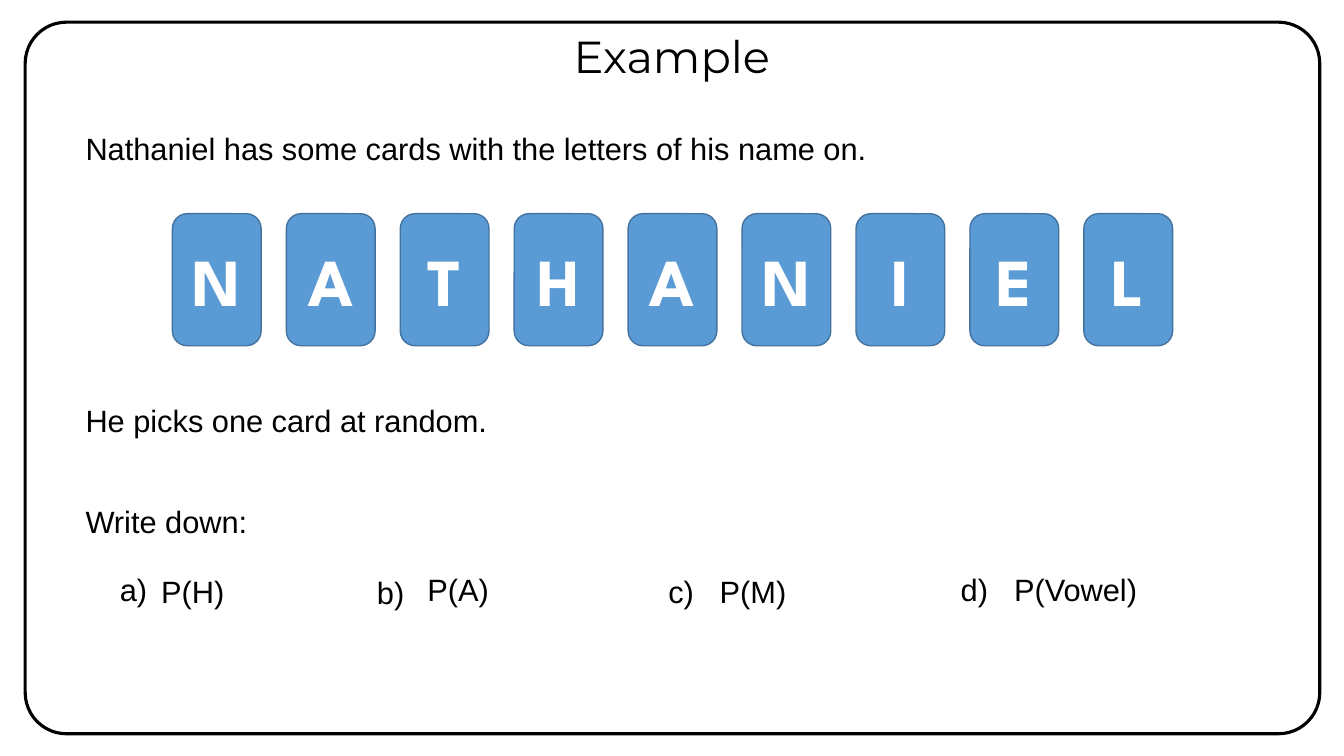
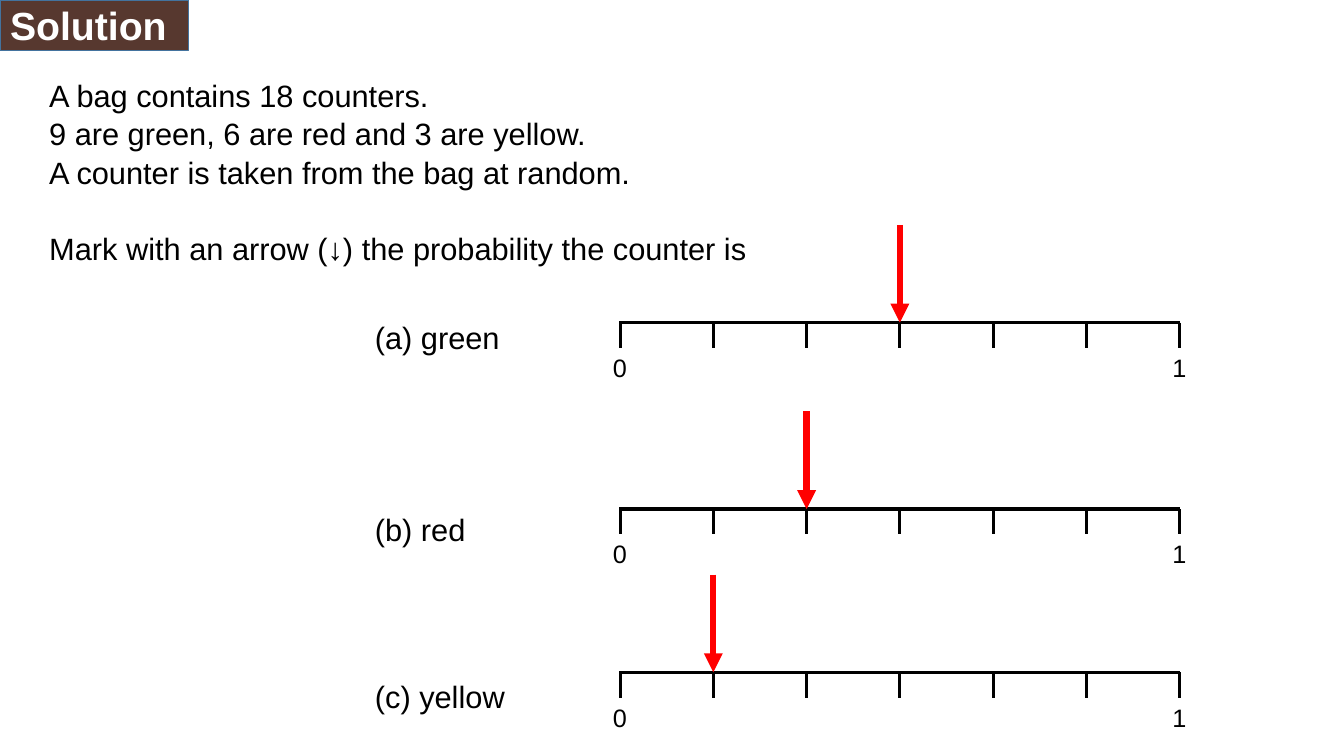
from lxml import etree
from pptx import Presentation
from pptx.dml.color import RGBColor
from pptx.enum import shapes, text
from pptx.oxml import ns
from pptx.util import Inches, Pt

BLACK = RGBColor(0x00, 0x00, 0x00)
WHITE = RGBColor(0xFF, 0xFF, 0xFF)
BLUE = RGBColor(0x5B, 0x9B, 0xD5)
DARK_BLUE = RGBColor(0x43, 0x73, 0x9E)
BROWN = RGBColor(0x57, 0x38, 0x2F)
RED = RGBColor(0xFF, 0x00, 0x00)
BODY_FONT, TITLE_FONT, CARD_FONT = "Arial", "Montserrat", "League Spartan"
LEFT, CENTER = text.PP_ALIGN.LEFT, text.PP_ALIGN.CENTER
TOP, MIDDLE = text.MSO_ANCHOR.TOP, text.MSO_ANCHOR.MIDDLE
BODY_SIZE, LINE_SPACING = 22, 1.05
LINE_HEIGHT = 0.47

NAME = "NATHANIEL"
CARD_LEFT, CARD_TOP, CARD_WIDTH, CARD_HEIGHT, CARD_PITCH = 1.71, 2.12, 0.88, 1.31, 1.13
STATEMENTS = [
    ("Nathaniel has some cards with the letters of his name on.", 1.22),
    ("He picks one card at random.", 3.92),
    ("Write down:", 4.92),
]
# label, its left and top, event, its left and top
QUESTIONS = [
    ("a)", 1.09, 5.59, "P(H)", 1.5, 5.61),
    ("b)", 3.64, 5.62, "P(A)", 4.14, 5.59),
    ("c)", 6.53, 5.61, "P(M)", 7.04, 5.61),
    ("d)", 9.43, 5.59, "P(Vowel)", 9.96, 5.59),
]

COUNTERS = 18
PROBLEM = [
    "A bag contains 18 counters.",
    "9 are green, 6 are red and 3 are yellow.",
    "A counter is taken from the bag at random.",
    "Mark with an arrow (↓) the probability the counter is",
]
# label, its top, top of the scale, number of counters
COLOURS = [
    ("(a) green", 3.09, 3.2, 9),
    ("(b) red", 5, 5.05, 6),
    ("(c) yellow", 6.66, 6.67, 3),
]
SCALE_LEFT, SCALE_WIDTH, SCALE_PARTS = 6.15, 5.55, 6
TICK_HEIGHT, ARROW_LENGTH = 0.25, 0.97


def write(shape, lines, size=BODY_SIZE, font=BODY_FONT, color=BLACK, bold=False,
          align=LEFT, anchor=TOP, spacing=1.0):
    frame = shape.text_frame
    frame.text = "\n".join(lines)
    frame.word_wrap = True
    frame.auto_size = text.MSO_AUTO_SIZE.NONE
    frame.vertical_anchor = anchor
    for paragraph in frame.paragraphs:
        paragraph.alignment = align
        paragraph.line_spacing = spacing
        for run in paragraph.runs:
            run.font.size, run.font.name, run.font.bold = Pt(size), font, bold
            run.font.color.rgb = color


def add_text(slide, lines, left, top, width, height=LINE_HEIGHT, size=BODY_SIZE):
    box = slide.shapes.add_textbox(*map(Inches, (left, top, width, height)))
    write(box, lines, size, spacing=LINE_SPACING)
    return box


def paint(shape, fill, line, width):
    shape.fill.solid()
    shape.fill.fore_color.rgb = fill
    shape.line.color.rgb = line
    shape.line.width = Pt(width)


def add_rounded(slide, left, top, width, height, fill, line, line_width):
    shape = slide.shapes.add_shape(shapes.MSO_SHAPE.ROUNDED_RECTANGLE,
                                   *map(Inches, (left, top, width, height)))
    shape.shadow.inherit = False
    paint(shape, fill, line, line_width)
    return shape


def add_line(slide, x1, y1, x2, y2, color=BLACK, width=2.25, arrow=False):
    line = slide.shapes.add_connector(shapes.MSO_CONNECTOR.STRAIGHT,
                                      *map(Inches, (x1, y1, x2, y2)))
    line.line.color.rgb = color
    line.line.width = Pt(width)
    if arrow:
        outline = line.line._get_or_add_ln()
        etree.SubElement(outline, ns.qn("a:tailEnd"), type="triangle")
    etree.SubElement(line.element.spPr, ns.qn("a:effectLst"))


def add_titled_slide(presentation, title, left, top, width, height, **style):
    slide = presentation.slides.add_slide(presentation.slide_layouts[5])
    shape = slide.shapes.title
    shape.left, shape.top, shape.width, shape.height = map(Inches, (left, top, width, height))
    write(shape, [title], **style)
    return slide


def add_scale(slide, top, probability):
    """Draw a probability line from 0 to 1 with an arrow at the probability."""
    right = SCALE_LEFT + SCALE_WIDTH
    add_line(slide, SCALE_LEFT - 0.01, top, right, top)
    for part in range(SCALE_PARTS + 1):
        x = SCALE_LEFT + SCALE_WIDTH * part / SCALE_PARTS
        add_line(slide, x, top, x, top + TICK_HEIGHT)
    for label, x in (("0", SCALE_LEFT), ("1", right)):
        add_text(slide, [label], x - 0.17, top + 0.23, 0.47, 0.4, size=18)
    x = SCALE_LEFT + SCALE_WIDTH * probability
    add_line(slide, x, top - ARROW_LENGTH, x, top, RED, 4.5, arrow=True)


def build_example(presentation):
    slide = add_titled_slide(presentation, "Example", 5.45, 0.23, 2.43, 0.64,
                             size=32, font=TITLE_FONT, align=CENTER)
    frame = add_rounded(slide, 0.25, 0.22, 12.84, 7.06, WHITE, BLACK, 2.25)
    frame.adjustments[0] = 0.058
    slide.shapes.title.element.addprevious(frame.element)
    for statement, top in STATEMENTS:
        add_text(slide, [statement], 0.75, top, 9.43)
    for column, letter in enumerate(NAME):
        card = add_rounded(slide, CARD_LEFT + column * CARD_PITCH, CARD_TOP,
                           CARD_WIDTH, CARD_HEIGHT, BLUE, DARK_BLUE, 1)
        write(card, [letter], 48, CARD_FONT, WHITE, True, CENTER, MIDDLE)
    for label, label_left, label_top, event, event_left, event_top in QUESTIONS:
        add_text(slide, [label], label_left, label_top, 0.58)
        add_text(slide, [event], event_left, event_top, 2.04)


def build_solution(presentation):
    slide = add_titled_slide(presentation, "Solution", 0, 0, 1.87, 0.5,
                             size=28, color=WHITE, bold=True, anchor=MIDDLE)
    paint(slide.shapes.title, BROWN, DARK_BLUE, 1)
    problem = add_text(slide, PROBLEM, 0.39, 0.69, 8.36, 1.95)
    problem.text_frame.paragraphs[-1].space_before = Pt(26.5)
    for label, label_top, scale_top, count in COLOURS:
        add_text(slide, [label], 3.62, label_top, 1.72)
        add_scale(slide, scale_top, count / COUNTERS)


def main():
    presentation = Presentation()
    presentation.slide_width, presentation.slide_height = Inches(13.33), Inches(7.5)
    build_example(presentation)
    build_solution(presentation)
    presentation.save("out.pptx")


if __name__ == "__main__":
    main()
